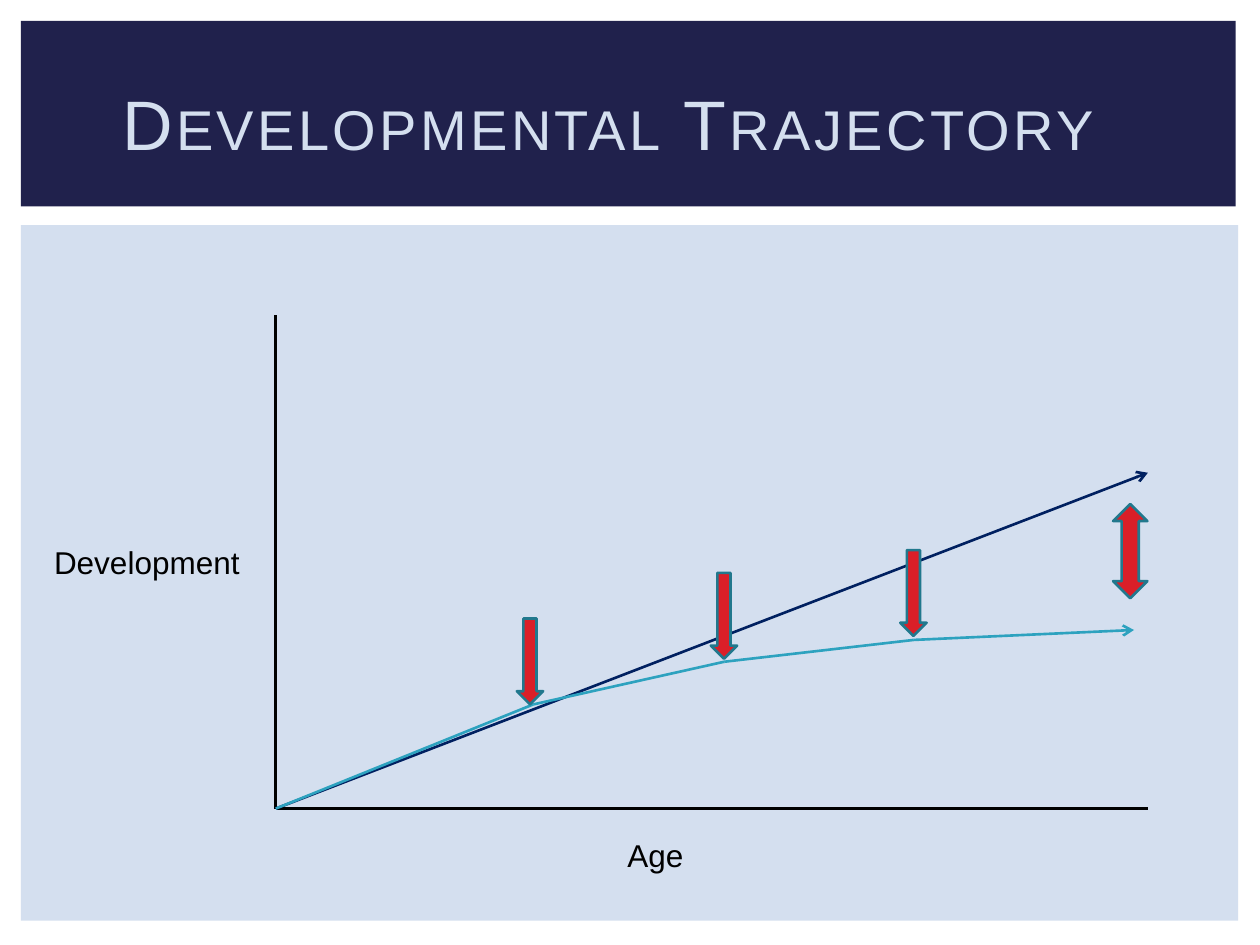
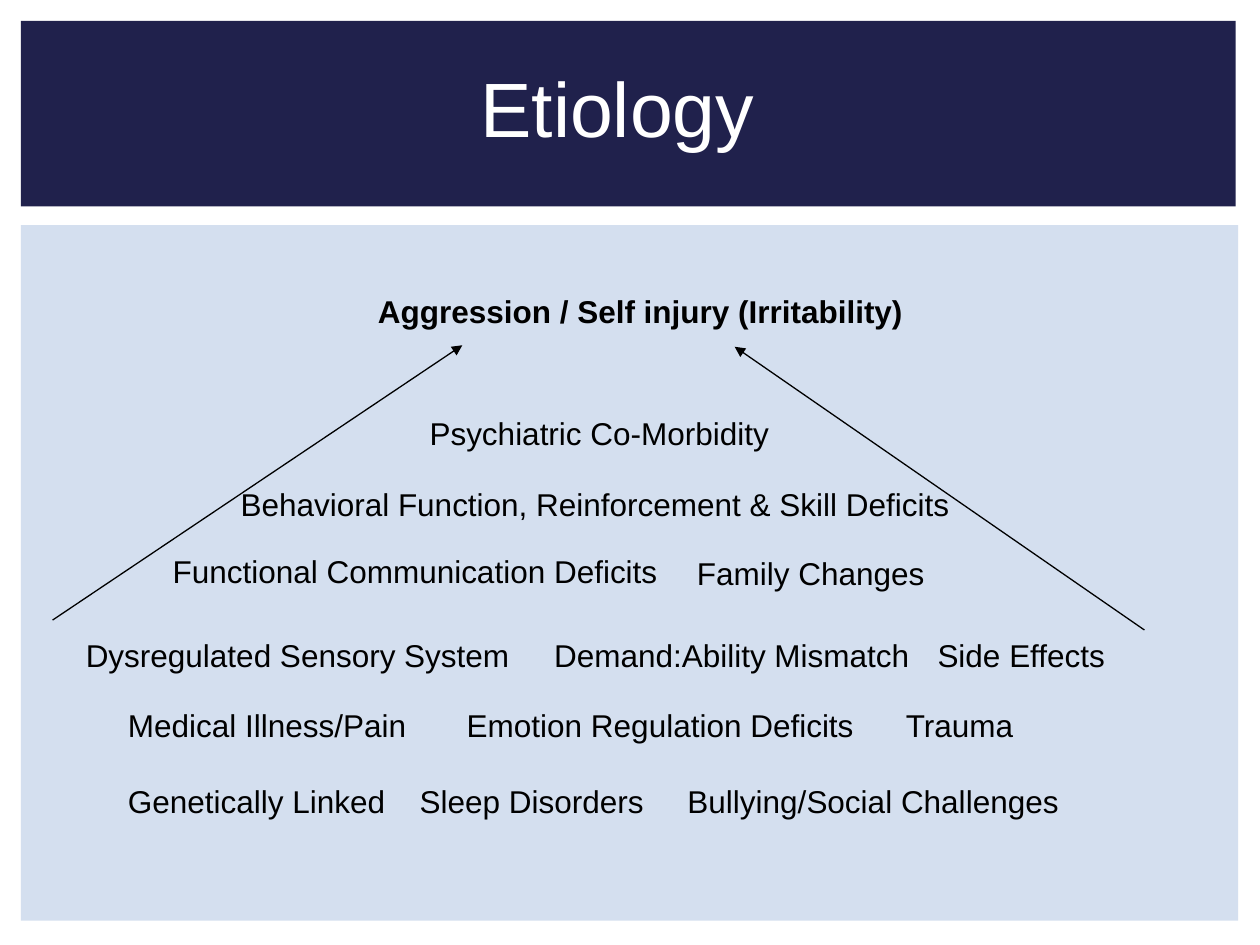
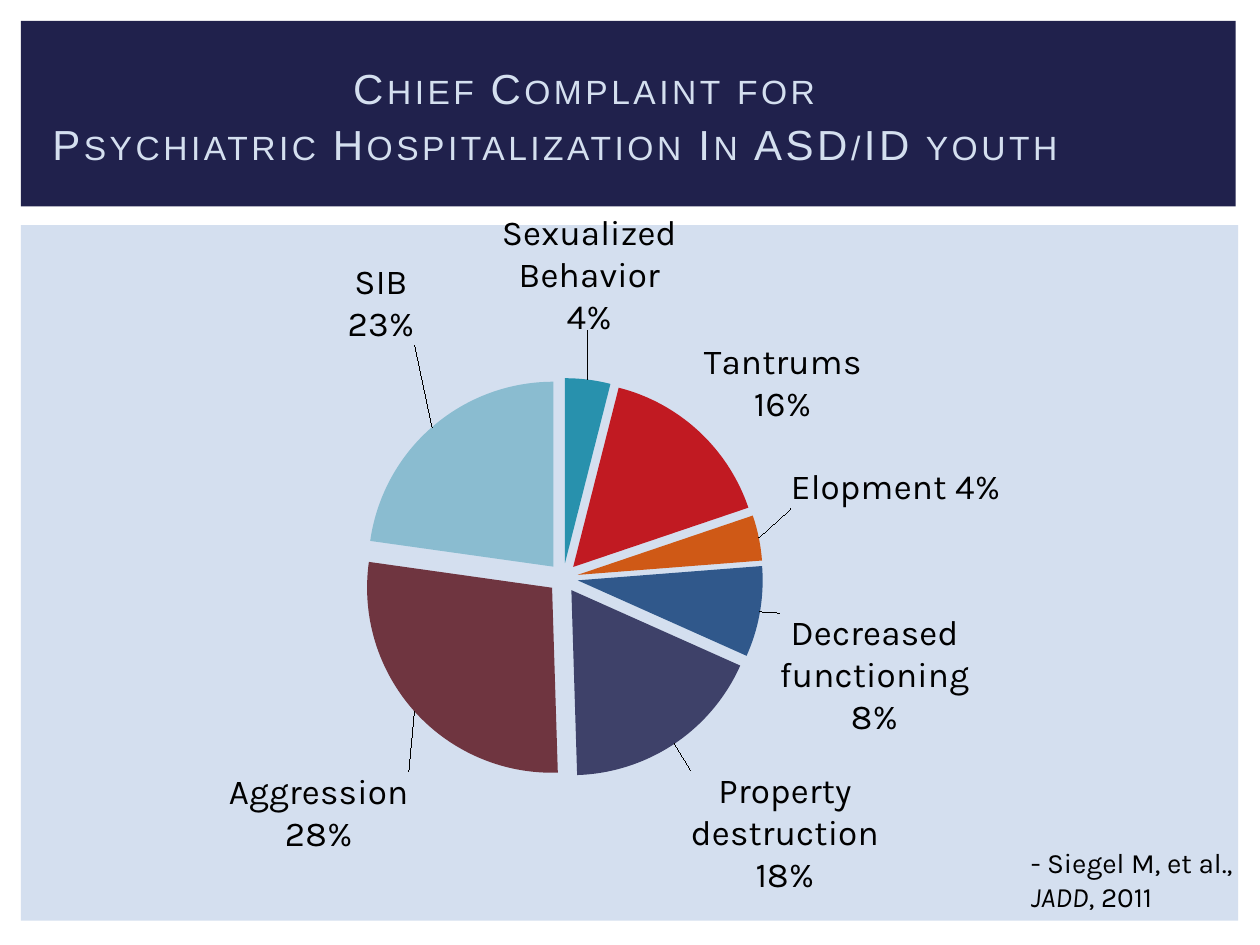
from itertools import pairwise

from lxml import etree
from pptx import Presentation
from pptx.chart.data import CategoryChartData
from pptx.dml.color import RGBColor
from pptx.enum.chart import XL_CHART_TYPE, XL_LABEL_POSITION
from pptx.enum.shapes import MSO_CONNECTOR, MSO_SHAPE
from pptx.enum.text import MSO_ANCHOR, PP_ALIGN
from pptx.oxml.ns import qn
from pptx.util import Cm, Pt

PIE = XL_CHART_TYPE.PIE
OUT_END = XL_LABEL_POSITION.OUTSIDE_END
LINE = MSO_CONNECTOR.STRAIGHT
RECT, DOWN, UP_DOWN = MSO_SHAPE.RECTANGLE, MSO_SHAPE.DOWN_ARROW, MSO_SHAPE.UP_DOWN_ARROW
MIDDLE, CENTER = MSO_ANCHOR.MIDDLE, PP_ALIGN.CENTER

HUES = {
    "band": "20214C", "panel": "D4DFEF", "white": "FFFFFF", "ink": "000000",
    "norm": "002060", "delay": "2DA2BF", "red": "DA1F28", "edge": "21788D",
}
SLICES = ["2891AD", "C11A22", "CF5916", "30588B", "3E4169", "6F3540", "8ABCD0"]


def rgb(hue):
    return RGBColor.from_string(HUES.get(hue, hue))


def manual(x, y, w=None, h=None):
    """Chart layout element, in fractions of the chart."""
    layout = etree.Element(qn("c:layout"))
    inner = etree.SubElement(layout, qn("c:manualLayout"))
    parts = [("x", x), ("y", y)]
    if w:
        parts = [("layoutTarget", "inner"), ("xMode", "edge"), ("yMode", "edge"),
                 *parts, ("w", w), ("h", h)]
    for tag, val in parts:
        etree.SubElement(inner, qn("c:" + tag)).set("val", str(val))
    return layout


class Deck:
    def __init__(self):
        self.prs = Presentation()
        self.prs.slide_width, self.prs.slide_height = Cm(25.4), Cm(19.05)
        self.page = self.prs.slide_layouts[5]
        self.slide = None

    def start(self):
        first = self.slide is None
        self.slide = self.prs.slides.add_slide(self.page)
        if first:
            self.bands()

    def bands(self):
        """Draw the two bands once and move them to the shared layout."""
        boxes = [("panel", 4.54, 24.54, 14.02), ("band", 0.42, 24.49, 3.74)]
        for spot, (hue, top, wide, high) in enumerate(boxes):
            band = self.shape(RECT, 0.42, top, wide, high, hue)
            band.element.nvSpPr.cNvPr.set("id", str(50 + spot))
            self.page.shapes.element.insert(2 + spot, band.element)

    def run(self, para, text, size=18, hue="ink", face="Arial", bold=False, slant=False):
        run = para.add_run()
        run.text = text
        font = run.font
        font.size, font.name, font.bold, font.italic = Pt(size), face, bold, slant
        font.color.rgb = rgb(hue)
        return run

    def title(self, lines, x, y, size, hue="panel", caps=True, gap=0):
        box = self.slide.shapes.title
        box.left, box.top, box.width, box.height = Cm(x), Cm(y), Cm(23.3), Cm(2.92)
        frame = box.text_frame
        frame.word_wrap, frame.vertical_anchor = True, MIDDLE
        for i, line in enumerate(lines):
            para = frame.add_paragraph() if i else frame.paragraphs[0]
            para.alignment = CENTER
            para.space_before = Pt(gap if i else 0)
            props = self.run(para, line, size, hue)._r.get_or_add_rPr()
            if caps:
                props.set("cap", "small")
                props.set("spc", "200")

    def text(self, x, y, w, *runs, h=1.02):
        """Each run is a text and a dict of its format."""
        frame = self.slide.shapes.add_textbox(Cm(x), Cm(y), Cm(w), Cm(h)).text_frame
        frame.word_wrap = True
        for words, style in runs:
            self.run(frame.paragraphs[0], words, **style)

    def shape(self, kind, x, y, w, h, fill, edge=None):
        shape = self.slide.shapes.add_shape(kind, Cm(x), Cm(y), Cm(w), Cm(h))
        shape.shadow.inherit = False
        shape.fill.solid()
        shape.fill.fore_color.rgb = rgb(fill)
        if edge:
            shape.line.color.rgb, shape.line.width = rgb(edge), Pt(1.5)
        else:
            shape.line.fill.background()
        return shape

    def line(self, start, end, hue="ink", width=1.5, tip=None):
        line = self.slide.shapes.add_connector(LINE, *map(Cm, start + end))
        line.line.color.rgb, line.line.width = rgb(hue), Pt(width)
        if tip:
            etree.SubElement(line.line._get_or_add_ln(), qn("a:tailEnd")).set("type", tip)
        etree.SubElement(line.element.spPr, qn("a:effectLst"))

    def pie(self, x, y, w, h, rows, plot):
        """Each row is a name, a value, label lines and a label shift."""
        data = CategoryChartData()
        data.categories = [row[0] for row in rows]
        data.add_series("Series 1", [row[1] for row in rows])
        chart = self.slide.shapes.add_chart(PIE, Cm(x), Cm(y), Cm(w), Cm(h), data).chart
        chart.has_legend = chart.has_title = False
        chart.font.name, chart.font.size = "Karla", Pt(18)
        chart.font.color.rgb = rgb("ink")
        chart.plots[0].vary_by_categories = True

        # Plot place and slice gaps
        area = chart._chartSpace.chart.plotArea
        for old in area.findall(qn("c:layout")):
            area.remove(old)
        area.insert(0, manual(*plot))
        series = chart.plots[0].series[0]
        burst = etree.Element(qn("c:explosion"))
        burst.set("val", "8")
        series._element.find(qn("c:tx")).addnext(burst)

        # Labels shared by all slices
        labels = series.data_labels
        labels.show_category_name = labels.show_percentage = True
        labels.show_value = False
        labels.number_format, labels.number_format_is_linked = "0%", False
        labels.position = OUT_END
        labels.font.size, labels.font.name = Pt(20), "Karla"
        labels.font.color.rgb = rgb("ink")
        split = etree.Element(qn("c:separator"))
        split.text = "\n"
        labels._element.find(qn("c:showBubbleSize")).addnext(split)

        # Slice colours and moved labels
        for i, (_, _, lines, shift) in enumerate(rows):
            point = series.points[i]
            point.format.fill.solid()
            point.format.fill.fore_color.rgb = rgb(SLICES[i])
            if not lines:
                continue
            label = point.data_label
            frame = label.text_frame
            for j, words in enumerate(lines):
                para = frame.add_paragraph() if j else frame.paragraphs[0]
                self.run(para, words, 20, face="Karla")
            label.position = OUT_END
            label._dLbl.find(qn("c:idx")).addnext(manual(*shift))


def growth(deck):
    deck.start()
    deck.title(["Developmental Trajectory"], 1.46, 1, 40)
    zero = (5.56, 16.3)
    deck.line((5.56, 6.35), zero)
    deck.line(zero, (23.14, 16.3))
    deck.text(0.84, 10.82, 4.6, ("Development", {}))
    deck.text(12.4, 16.72, 2.34, ("Age", {}))

    # Expected and delayed paths
    deck.line(zero, (23.14, 9.53), "norm", tip="arrow")
    curve = [zero, (10.75, 14.2), (14.6, 13.34), (18.42, 12.9), (22.86, 12.7)]
    for start, end in pairwise(curve):
        deck.line(start, end, "delay", tip="arrow" if end == curve[-1] else None)

    # Setbacks and the final gap
    for x, y in [(10.42, 12.47), (14.33, 11.55), (18.15, 11.09)]:
        deck.shape(DOWN, x, y, 0.53, 1.73, "red", "edge")
    deck.shape(UP_DOWN, 22.44, 10.16, 0.69, 1.9, "red", "edge")


def causes(deck):
    deck.start()
    deck.title(["Etiology"], 0.8, 0.69, 44, "white", caps=False)
    deck.text(7.37, 5.77, 12, ("Aggression / Self injury (Irritability)", {"bold": True}))
    rows = [
        (8.22, [(8.41, "Psychiatric Co-Morbidity")]),
        (9.65, [(4.6, "Behavioral Function, Reinforcement & Skill Deficits")]),
        (11.0, [(3.23, "Functional Communication Deficits")]),
        (11.04, [(13.8, "Family Changes")]),
        (12.69, [(1.48, "Dysregulated Sensory System"),
                 (10.92, "Demand:Ability Mismatch"), (18.65, "Side Effects")]),
        (14.1, [(2.33, "Medical Illness/Pain"),
                (9.16, "Emotion Regulation Deficits"), (18.01, "Trauma")]),
        (15.64, [(2.33, "Genetically Linked"), (8.21, "Sleep Disorders"),
                 (13.61, "Bullying/Social Challenges")]),
    ]
    for y, items in rows:
        for x, words in items:
            deck.text(x, y, 1.5 + 0.29 * len(words), (words, {}))
    deck.line((1.06, 12.5), (9.32, 6.96), width=0.75, tip="triangle")
    deck.line((23.07, 12.7), (14.81, 6.99), width=0.75, tip="triangle")


def claims(deck):
    deck.start()
    rows = [
        ("Sexualized Behavior", 4, ["Sexualized Behavior", "4%"], (-0.07, -0.06)),
        ("Tantrums", 16, None, None),
        ("Elopment", 4, ["Elopment 4%"], (0.02, -0.04)),
        ("Decreased functioning", 8, ["Decreased functioning", "8%"], (0.01, 0)),
        ("Property destruction", 18, ["Property destruction", "18%"], (0.01, 0.03)),
        ("Aggression", 28, ["Aggression", "28%"], (0, 0.08)),
        ("SIB", 23, ["SIB", "23%"], (-0.01, -0.11)),
    ]
    deck.pie(-0.43, 4.29, 25.07, 13.89, rows, (0.06, 0.24, 0.82, 0.58))
    deck.title(["Chief Complaint for", "Psychiatric Hospitalization In ASD/ID youth"],
               0.8, 0.87, 24, gap=3.5)
    note = {"size": 16, "face": "Karla"}
    deck.text(20.53, 16.93, 4.83, ("- Siegel M, et al., ", note),
              ("JADD", {**note, "slant": True}), (", 2011", note), h=1.63)


def main():
    deck = Deck()
    growth(deck)
    causes(deck)
    claims(deck)
    deck.prs.save("out.pptx")


if __name__ == "__main__":
    main()
